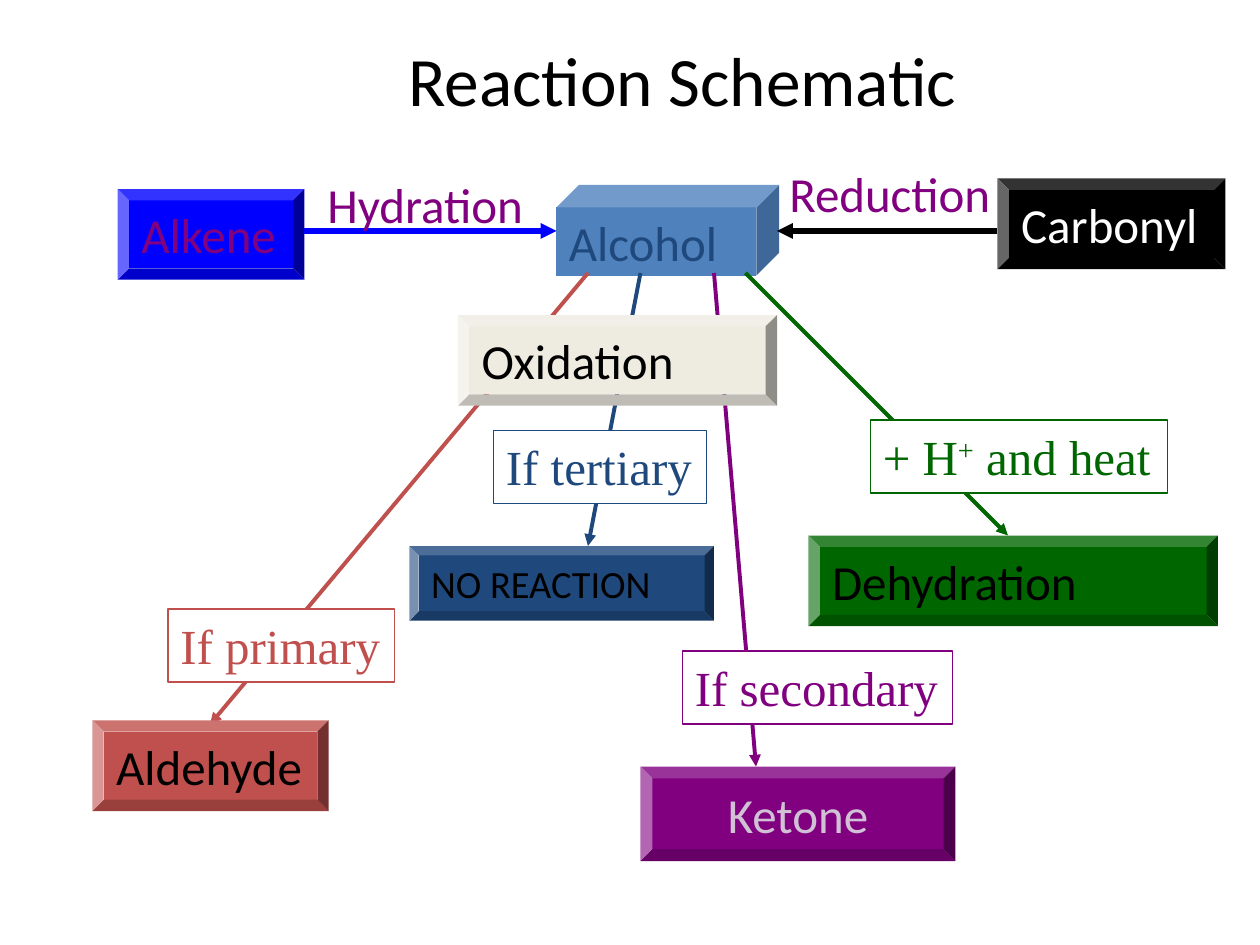
import lxml.etree
import pptx
import pptx.dml.color
import pptx.enum.shapes
import pptx.enum.text
import pptx.oxml.ns
import pptx.util

COLUMNS, ROWS = 120, 90
BOX_ROWS, NOTE_ROWS, CAPTION_ROWS = 8.64, 6.96, 6.8
COLORS = {
    "black": "000000", "white": "FFFFFF", "blue": "0000FF",
    "steel": "4F81BD", "navy": "1F497D", "red": "C0504D",
    "purple": "800080", "lilac": "D0C1D5", "green": "006600",
    "cream": "EEECE1",
}
SHAPE = pptx.enum.shapes.MSO_SHAPE
ALIGN = pptx.enum.text.PP_ALIGN
ANCHOR = pptx.enum.text.MSO_ANCHOR
FIT = pptx.enum.text.MSO_AUTO_SIZE

prs = pptx.Presentation()
prs.slide_width = pptx.util.Inches(10)
prs.slide_height = pptx.util.Inches(7.5)


def across(columns):
    return round(prs.slide_width * columns / COLUMNS)


def down(rows):
    return round(prs.slide_height * rows / ROWS)


def area(column, row, columns, rows):
    return across(column), down(row), across(columns), down(rows)


def rgb(name):
    return pptx.dml.color.RGBColor.from_string(COLORS[name])


def add_child(parent, tag, **attributes):
    return lxml.etree.SubElement(parent, pptx.oxml.ns.qn(tag), attributes)


def move(placeholder, *cells):
    (placeholder.left, placeholder.top,
     placeholder.width, placeholder.height) = area(*cells)


def write(shape, text, color, size=28, font="Calibri", align=ALIGN.LEFT,
          wrap=True, fit=FIT.SHAPE_TO_FIT_TEXT):
    frame = shape.text_frame
    frame.word_wrap = wrap
    frame.auto_size = fit
    paragraph = frame.paragraphs[0]
    paragraph.alignment = align
    paragraph.font.size = pptx.util.Pt(size)
    paragraph.font.name = font
    paragraph.font.color.rgb = rgb(color)
    for position, part in enumerate(text.split("^")):
        run = paragraph.add_run()
        run.text = part
        if position % 2:
            run.font._element.set("baseline", "30000")
    return paragraph


def paint(shape, fill, outline=None):
    shape.fill.solid()
    shape.fill.fore_color.rgb = rgb(fill)
    if outline:
        shape.line.color.rgb = rgb(outline)
        shape.line.width = pptx.util.Pt(0.75)
    else:
        shape.line.fill.background()


def add_box(slide, text, cells, fill, color, kind=SHAPE.BEVEL, **style):
    box = slide.shapes.add_shape(kind, *area(*cells))
    box.shadow.inherit = False
    paint(box, fill)
    write(box, text, color, **style)


def add_note(slide, text, column, row, columns, color):
    note = slide.shapes.add_shape(
        SHAPE.RECTANGLE, *area(column, row, columns, NOTE_ROWS))
    note.shadow.inherit = False
    paint(note, "white", color)
    note.text_frame.vertical_anchor = ANCHOR.TOP
    write(note, text, color, font="Times New Roman", wrap=False)


def add_caption(slide, text, column, row, columns):
    caption = slide.shapes.add_textbox(
        *area(column, row, columns, CAPTION_ROWS))
    write(caption, text, "purple", wrap=False)


def add_arrow(slide, start, end, color, width=2.25):
    arrow = slide.shapes.add_connector(
        pptx.enum.shapes.MSO_CONNECTOR.STRAIGHT,
        across(start[0]), down(start[1]), across(end[0]), down(end[1]))
    arrow.line.color.rgb = rgb(color)
    arrow.line.width = pptx.util.Pt(width)
    add_child(arrow.line._get_or_add_ln(), "a:tailEnd", type="triangle")
    add_child(arrow._element.spPr, "a:effectLst")


def fill_title(title):
    move(title, 14, 3, 102, 9)
    title.text_frame.vertical_anchor = ANCHOR.MIDDLE
    write(title, "Reaction Schematic", "black", size=39.6,
          align=ALIGN.CENTER, fit=FIT.NONE)


def fill_ketone(ketone):
    move(ketone, 61, 73, 30, 9)
    bevel = add_child(ketone._element.spPr, "a:prstGeom", prst="bevel")
    add_child(bevel, "a:avLst")
    paint(ketone, "purple")
    ketone.text_frame.vertical_anchor = ANCHOR.TOP
    paragraph = write(ketone, "Ketone", "lilac", align=ALIGN.CENTER,
                      fit=FIT.NONE)
    properties = paragraph._p.get_or_add_pPr()
    indent = pptx.util.Inches(0.38)
    properties.set("marL", str(indent))
    properties.set("indent", str(-indent))
    properties.insert(0, properties.makeelement(pptx.oxml.ns.qn("a:buNone")))


def main():
    slide = prs.slides.add_slide(prs.slide_layouts[1])
    fill_title(slide.shapes.title)
    fill_ketone(slide.placeholders[1])

    add_box(slide, "Alcohol", (53, 17.6, 21.2, BOX_ROWS), "steel", "navy",
            kind=SHAPE.CUBE)
    for start, end, color in (
            (56, (20, 69), "red"), (61, (56, 52), "navy"),
            (68, (72, 73), "purple"), (71, (96, 51), "green")):
        add_arrow(slide, (start, 26), end, color)

    add_box(slide, "Aldehyde", (8.8, 68.6, 22.5, BOX_ROWS), "red", "black",
            wrap=False)
    add_box(slide, "NO REACTION", (39, 52, 29, 7.1), "navy", "black", size=22)
    add_box(slide, "Dehydration", (77, 51, 39, BOX_ROWS), "green", "black")

    for text, column, row, columns, color in (
            ("If primary", 16, 58, 21.6, "red"),
            ("If tertiary", 47, 41, 20.3, "navy"),
            ("If secondary", 65, 62, 25.7, "purple"),
            ("+ H^+^ and heat", 82.9, 40, 28.3, "green")):
        add_note(slide, text, column, row, columns, color)

    add_box(slide, "Alkene", (11.2, 18, 17.8, BOX_ROWS), "blue", "purple",
            wrap=False)
    add_arrow(slide, (29, 22), (53, 22), "blue", width=3)
    add_caption(slide, "Hydration", 30, 16, 21.4)
    add_box(slide, "Carbonyl", (95, 17, 21.7, BOX_ROWS), "black", "white",
            wrap=False)
    add_arrow(slide, (95, 22), (74, 22), "black", width=3)
    add_caption(slide, "Reduction", 74, 15, 21.6)
    add_box(slide, "Oxidation", (43.6, 30, 30.4, BOX_ROWS), "cream", "black")

    prs.save("out.pptx")


if __name__ == "__main__":
    main()
